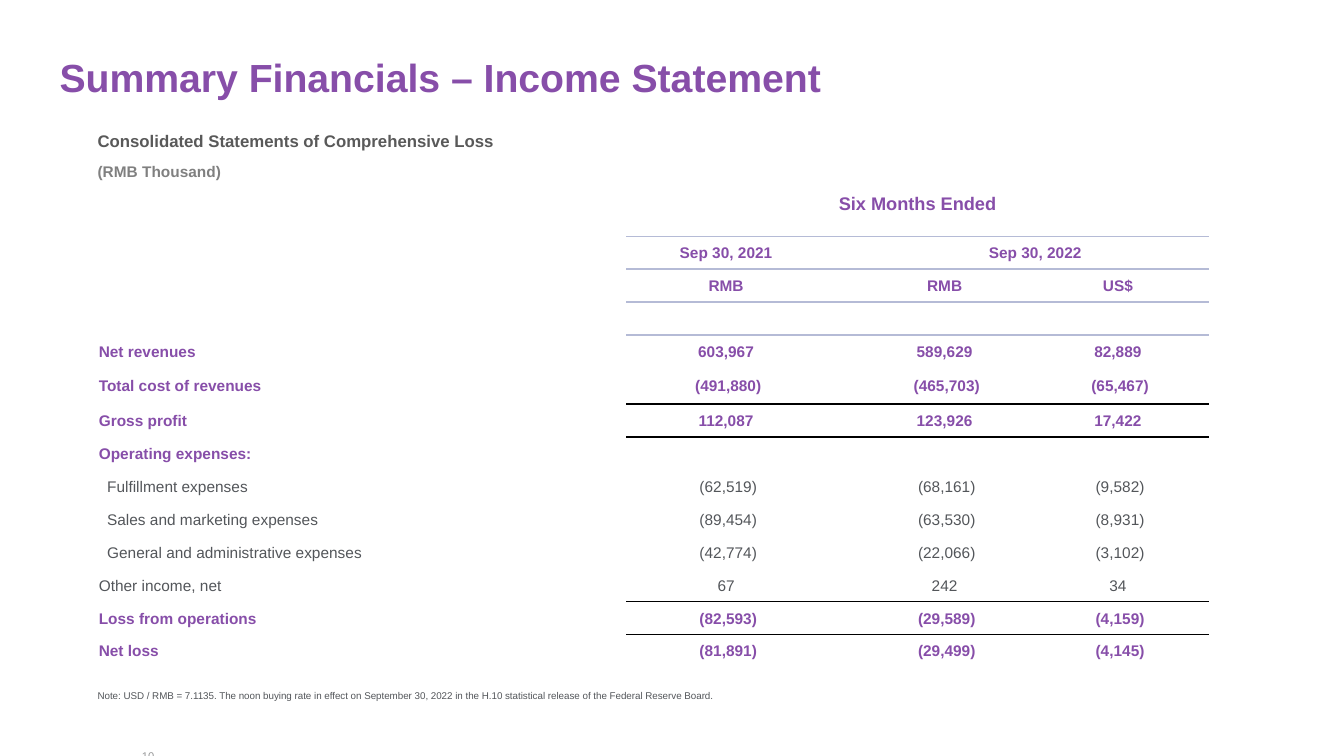
from collections import namedtuple

import pptx
import pptx.dml.color
import pptx.enum.text
import pptx.oxml
import pptx.oxml.ns
import pptx.util

Cm, Pt = pptx.util.Cm, pptx.util.Pt
RGBColor = pptx.dml.color.RGBColor
PP_ALIGN = pptx.enum.text.PP_ALIGN
MSO_ANCHOR = pptx.enum.text.MSO_ANCHOR

PURPLE = RGBColor(0x87, 0x4E, 0xA9)
BODY_GREY = RGBColor(0x53, 0x56, 0x5A)
HEADING_GREY = RGBColor(0x59, 0x59, 0x59)
UNIT_GREY = RGBColor(0x80, 0x80, 0x80)
NUMBER_GREY = RGBColor(0x99, 0x9A, 0x9B)
HEADER_RULE = RGBColor(0xB5, 0xBB, 0xD6)
TOTAL_RULE = RGBColor(0x00, 0x00, 0x00)

FONT = "Arial"
NO_TABLE_STYLE = "{2D5ABB26-0587-4C30-8999-92F81FD0307C}"

Box = namedtuple("Box", "left top width height")  # centimetres
Line = namedtuple("Line", "label amounts strong indented")

COLUMN_WIDTHS = [12.67, 0.66, 5.03, 0.91, 4.17, 4.57]
ROW_HEIGHT = 0.83
COST_ROW, COST_ROW_HEIGHT = 6, 0.91
AMOUNT_COLUMNS = [2, 4, 5]
FIRST_LINE_ROW = 5

# row, column, last row, last column, text, size
HEADERS = [
    (0, 2, 1, 5, "Six Months Ended", 13),
    (2, 2, 2, 2, "Sep 30, 2021", 11),
    (2, 4, 2, 5, "Sep 30, 2022", 11),
    (3, 2, 3, 2, "RMB", 11),
    (3, 4, 3, 4, "RMB", 11),
    (3, 5, 3, 5, "US$", 11),
]

LINES = [
    Line("Net revenues", ["603,967", "589,629", "82,889"], True, False),
    Line("Total cost of revenues", ["(491,880)", "(465,703)", "(65,467)"], True, False),
    Line("Gross profit", ["112,087", "123,926", "17,422"], True, False),
    Line("Operating expenses:", [], True, False),
    Line("Fulfillment expenses", ["(62,519)", "(68,161)", "(9,582)"], False, True),
    Line("Sales and marketing expenses", ["(89,454)", "(63,530)", "(8,931)"], False, True),
    Line("General and administrative expenses", ["(42,774)", "(22,066)", "(3,102)"], False, True),
    Line("Other income, net", ["67", "242", "34"], False, False),
    Line("Loss from operations", ["(82,593)", "(29,589)", "(4,159)"], True, False),
    Line("Net loss", ["(81,891)", "(29,499)", "(4,145)"], True, False),
]

# row above the rule, columns, colour
RULES = [
    (1, [2, 3, 4, 5], HEADER_RULE),
    (2, [2, 4, 5], HEADER_RULE),
    (3, [2, 3, 4, 5], HEADER_RULE),
    (6, [2, 3, 4, 5], TOTAL_RULE),
    (12, [2, 3, 4, 5], TOTAL_RULE),
    (13, [2, 3, 4, 5], TOTAL_RULE),
]


def add_run(paragraph, text, size, color, bold=False):
    run = paragraph.add_run()
    run.text = text
    run.font.name = FONT
    run.font.size = Pt(size)
    run.font.bold = bold
    run.font.color.rgb = color


def place(shape, box):
    shape.left, shape.top, shape.width, shape.height = map(Cm, box)


def clear_margins(frame):
    frame.margin_left = frame.margin_right = frame.margin_top = frame.margin_bottom = 0
    frame.word_wrap = True
    frame.auto_size = pptx.enum.text.MSO_AUTO_SIZE.NONE


def add_title(slide, box):
    title = slide.shapes.title
    place(title, box)
    frame = title.text_frame
    clear_margins(frame)
    frame.vertical_anchor = MSO_ANCHOR.TOP
    frame.paragraphs[0].alignment = PP_ALIGN.LEFT
    add_run(frame.paragraphs[0], "Summary Financials – Income Statement", 28, PURPLE, True)


def add_caption(slide, box, text, size, color, bold=False, align=PP_ALIGN.LEFT):
    frame = slide.shapes.add_textbox(*map(Cm, box)).text_frame
    clear_margins(frame)
    frame.paragraphs[0].alignment = align
    add_run(frame.paragraphs[0], text, size, color, bold)


def add_border(cell, side, color):
    """Draw a one-point border; side is lnT or lnB."""
    border = pptx.oxml.parse_xml(
        f'<a:{side} {pptx.oxml.ns.nsdecls("a")} w="12700">'
        f'<a:solidFill><a:srgbClr val="{color}"/></a:solidFill></a:{side}>'
    )
    properties = cell._tc.get_or_add_tcPr()
    if side == "lnT":
        properties.insert(0, border)
    else:
        properties.append(border)


def prepare_cell(cell):
    """Set tight margins, no fill and a small size for cells without text."""
    cell.margin_left = cell.margin_right = cell.margin_top = Cm(0.03)
    cell.margin_bottom = 0
    cell.vertical_anchor = MSO_ANCHOR.MIDDLE
    cell.fill.background()
    end = pptx.oxml.parse_xml(f'<a:endParaRPr {pptx.oxml.ns.nsdecls("a")} sz="1100"/>')
    cell.text_frame.paragraphs[0]._p.append(end)


def write_cell(cell, text, size, color, bold, align):
    paragraph = cell.text_frame.paragraphs[0]
    paragraph.alignment = align
    add_run(paragraph, text, size, color, bold)


def fill_line(table, row, line):
    color = PURPLE if line.strong else BODY_GREY
    label = table.cell(row, 0)
    if line.indented:
        label.margin_left = Cm(0.24)
    write_cell(label, line.label, 11, color, line.strong, PP_ALIGN.LEFT)
    for column, amount in zip(AMOUNT_COLUMNS, line.amounts):
        cell = table.cell(row, column)
        if amount.startswith("("):
            cell.margin_left = Cm(0.14)
        write_cell(cell, amount, 11, color, line.strong, PP_ALIGN.CENTER)


def add_income_table(slide, box):
    row_count = FIRST_LINE_ROW + len(LINES)
    frame = slide.shapes.add_table(row_count, len(COLUMN_WIDTHS), *map(Cm, box))
    table = frame.table
    table.first_row = table.horz_banding = False
    table._tbl.tblPr.find(pptx.oxml.ns.qn("a:tableStyleId")).text = NO_TABLE_STYLE

    for column, share in zip(table.columns, COLUMN_WIDTHS):
        column.width = Cm(box.width * share / sum(COLUMN_WIDTHS))
    for index, row in enumerate(table.rows):
        row.height = Cm(COST_ROW_HEIGHT if index == COST_ROW else ROW_HEIGHT)

    for row, columns, color in RULES:
        for column in columns:
            add_border(table.cell(row, column), "lnB", color)
            add_border(table.cell(row + 1, column), "lnT", color)
    for cell in table.iter_cells():
        prepare_cell(cell)

    table.cell(0, 0).merge(table.cell(1, 0))
    for row, column, last_row, last_column, text, size in HEADERS:
        cell = table.cell(row, column)
        if (row, column) != (last_row, last_column):
            cell.merge(table.cell(last_row, last_column))
        write_cell(cell, text, size, PURPLE, True, PP_ALIGN.CENTER)
    for row, line in enumerate(LINES, FIRST_LINE_ROW):
        fill_line(table, row, line)


def build_income_slide(presentation):
    slide = presentation.slides.add_slide(presentation.slide_layouts[5])
    add_title(slide, Box(1.5, 1.35, 26.67, 1.2))
    add_income_table(slide, Box(2.46, 4.29, 28, 12.53))
    add_caption(slide, Box(2.46, 3.3, 10.9, 0.5),
                "Consolidated Statements of Comprehensive Loss", 12, HEADING_GREY, True)
    add_caption(slide, Box(2.46, 4.09, 3.48, 0.48), "(RMB Thousand)", 11, UNIT_GREY, True)
    add_caption(slide, Box(2.46, 17.37, 23.29, 0.3),
                "Note: USD / RMB = 7.1135. The noon buying rate in effect on September 30, 2022 "
                "in the H.10 statistical release of the Federal Reserve Board.", 7, BODY_GREY)
    add_caption(slide, Box(3.28, 18.88, 0.61, 0.35), "10", 8, NUMBER_GREY, align=PP_ALIGN.RIGHT)


def main():
    presentation = pptx.Presentation()
    presentation.slide_width = Cm(33.87)
    presentation.slide_height = Cm(19.05)
    build_income_slide(presentation)
    presentation.save("out.pptx")


if __name__ == "__main__":
    main()
